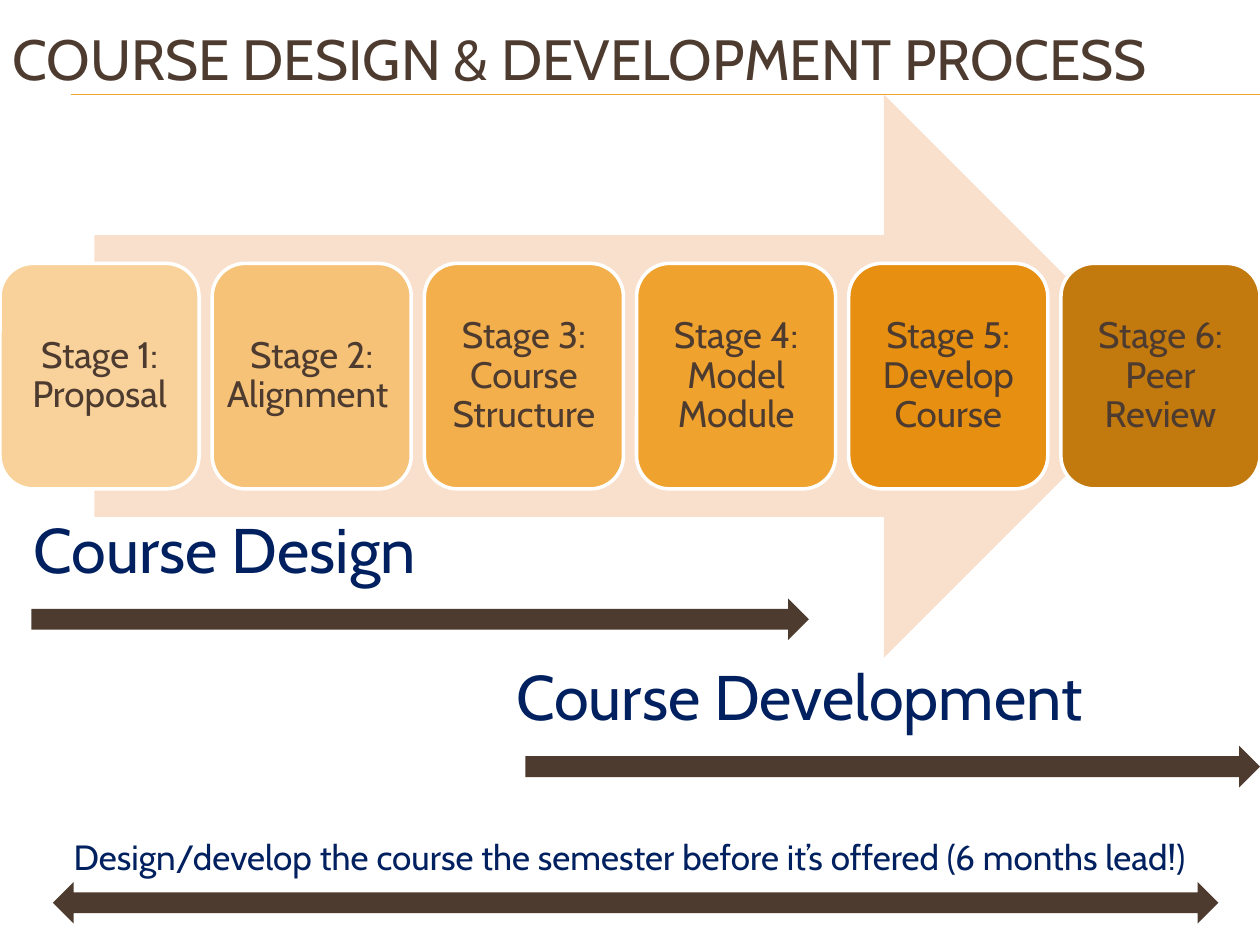
import pptx
import pptx.dml.color
import pptx.enum.shapes
import pptx.enum.text
import pptx.oxml.ns
import pptx.util
from lxml import etree

Inches = pptx.util.Inches
Shapes = pptx.enum.shapes.MSO_SHAPE
Align = pptx.enum.text.PP_ALIGN
Anchor = pptx.enum.text.MSO_ANCHOR
BROWN, NAVY, GOLD, WHITE = "4E3B30", "002060", "F0A22E", "FFFFFF"


def color(value):
    return pptx.dml.color.RGBColor.from_string(value)


def write(shape, text, size, text_color, align=Align.LEFT, spacing=1.0, **frame_format):
    frame = shape.text_frame
    frame_format = {"word_wrap": True, "auto_size": pptx.enum.text.MSO_AUTO_SIZE.NONE,
                    **frame_format}
    for name, value in frame_format.items():
        setattr(frame, name, value)
    paragraph = frame.paragraphs[0]
    paragraph.text = text
    paragraph.alignment = align
    paragraph.line_spacing = spacing
    for run in paragraph.runs:
        for name, value in {"name": "Cabin", "size": pptx.util.Pt(size), "bold": False}.items():
            setattr(run.font, name, value)
        run.font.color.rgb = color(text_color)


presentation = pptx.Presentation()
presentation.slide_width = Inches(10)
presentation.slide_height = Inches(7.5)
slide = presentation.slides.add_slide(presentation.slide_layouts[5])
shapes = slide.shapes

# Title and the rule below it
title = shapes.title
for name, value in {"left": 0, "top": 0, "width": 9.5, "height": 0.92}.items():
    setattr(title, name, Inches(value))
write(title, "COURSE DESIGN & DEVELOPMENT PROCESS", 32.4, BROWN, vertical_anchor=Anchor.MIDDLE)
rule = shapes.add_connector(pptx.enum.shapes.MSO_CONNECTOR.STRAIGHT,
                            Inches(0.56), Inches(0.75), Inches(10), Inches(0.75))
rule.line.color.rgb = color(GOLD)
rule.line.width = pptx.util.Pt(0.75)
etree.SubElement(rule._element.spPr, pptx.oxml.ns.qn("a:effectLst"))

# Arrows: the process behind the stages, then one for each time span
arrows = [
    (Shapes.RIGHT_ARROW, 0.75, 0.75, 8.5, 4.47, "F9E0CD"),
    (Shapes.RIGHT_ARROW, 0.25, 4.75, 6.17, 0.33, BROWN),
    (Shapes.RIGHT_ARROW, 4.17, 5.92, 5.83, 0.33, BROWN),
    (Shapes.LEFT_RIGHT_ARROW, 0.42, 7, 9.25, 0.33, BROWN),
]
for kind, left, top, width, height, fill in arrows:
    arrow = shapes.add_shape(kind, Inches(left), Inches(top), Inches(width), Inches(height))
    arrow.shadow.inherit = False
    arrow.fill.solid()
    arrow.fill.fore_color.rgb = color(fill)
    arrow.line.fill.background()

# Stages, evenly spread over the slide width
stages = [
    ("Stage 1: Proposal", "F8D29A"),
    ("Stage 2:\vAlignment ", "F5C277"),
    ("Stage 3:\vCourse\vStructure", "F2AF4C"),
    ("Stage 4:\vModel\vModule", GOLD),
    ("Stage 5:\vDevelop\vCourse", "E68F10"),
    ("Stage 6:\vPeer Review", "C2790E"),
]
stage_width = 1.58
step = (10 - stage_width) / (len(stages) - 1)
margins = {f"margin_{side}": Inches(0.01) for side in ("left", "top", "right", "bottom")}
for index, (text, fill) in enumerate(stages):
    stage = shapes.add_shape(Shapes.ROUNDED_RECTANGLE, Inches(index * step), Inches(2.09),
                             Inches(stage_width), Inches(1.79))
    stage.shadow.inherit = False
    stage.fill.solid()
    stage.fill.fore_color.rgb = color(fill)
    stage.line.color.rgb = color(WHITE)
    stage.line.width = pptx.util.Pt(2)
    write(stage, text, 21, BROWN, Align.CENTER, 0.9, vertical_anchor=Anchor.MIDDLE, **margins)

# Labels above the time spans
labels = [
    ("Course Design", 0.17, 4, 6.17, 0.71, 36, Align.LEFT),
    ("Course Development", 4, 5.17, 6, 0.71, 36, Align.LEFT),
    ("Design/develop the course the semester before it’s offered (6 months lead!)",
     0, 6.58, 10, 0.44, 20, Align.CENTER),
]
for text, left, top, width, height, size, align in labels:
    label = shapes.add_textbox(Inches(left), Inches(top), Inches(width), Inches(height))
    write(label, text, size, NAVY, align)

presentation.save("out.pptx")
